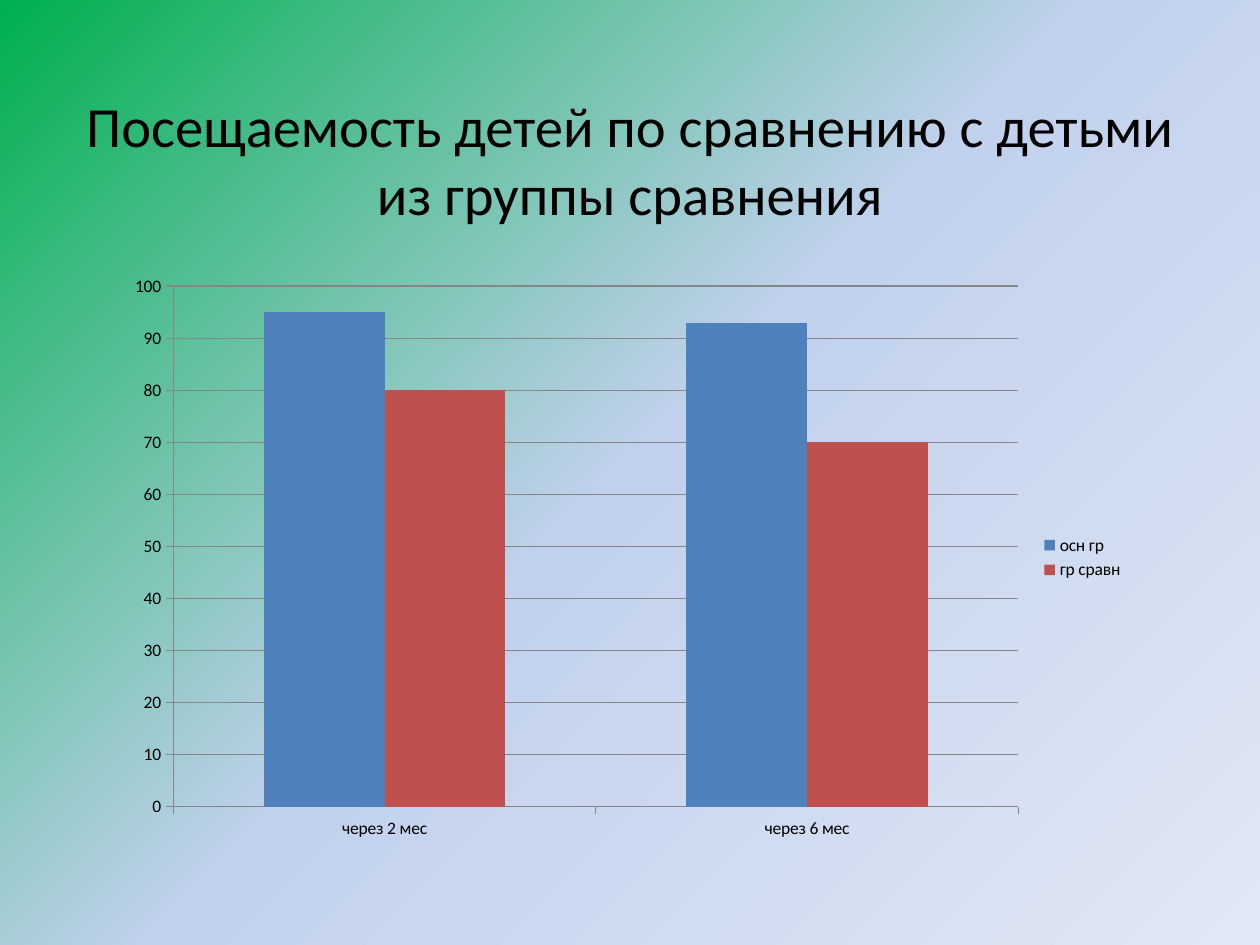
from copy import deepcopy

from pptx import Presentation
from pptx import util as u
from pptx.chart.data import CategoryChartData
from pptx.dml.color import RGBColor
from pptx.enum import chart as charts, text
from pptx.oxml.ns import qn

FONT = "Calibri"
BLACK = "000000"
AXIS_GREY = "868686"
BACKGROUND_STOPS = [(0, "00B050"), (0.5, "C2D1ED"), (1, "E1E8F5")]
PERIODS = ["через 2 мес", "через 6 мес"]
ATTENDANCE = [("осн гр", [95, 93], "4F81BD"), ("гр сравн", [80, 70], "C0504D")]


def color(value):
    """Return the colour for a hex string."""
    return RGBColor.from_string(value)


def set_font(font, size, value=BLACK):
    """Apply the deck's typeface, a size and a colour to a font."""
    font.name = FONT
    font.size = u.Pt(size)
    font.color.rgb = color(value)


def write_text(frame, words, size, align=text.PP_ALIGN.CENTER,
               anchor=text.MSO_ANCHOR.MIDDLE, top_inset=0.05):
    """Write one formatted paragraph into a text frame."""
    frame.word_wrap = True
    frame.auto_size = text.MSO_AUTO_SIZE.NONE
    frame.vertical_anchor = anchor
    frame.margin_top = u.Inches(top_inset)
    para = frame.paragraphs[0]
    para.alignment = align
    span = para.add_run()
    span.text = words
    set_font(span.font, size)


def paint_background(page, stops, angle):
    """Fill the page with a linear gradient at a clockwise angle."""
    fill = page.background.fill
    fill.gradient()
    fill.gradient_angle = 360 - angle
    stop_list = page.element.find(".//" + qn("a:gsLst"))
    for _ in range(len(stops) - len(stop_list)):
        stop_list.append(deepcopy(stop_list[0]))
    for stop, (position, value) in zip(fill.gradient_stops, stops):
        stop.position = position
        stop.color.rgb = color(value)


def place_title(page, left, top, width, height):
    """Place the heading in the lower part of the title box."""
    box = page.shapes.title
    box.left, box.top = u.Inches(left), u.Inches(top)
    box.width, box.height = u.Inches(width), u.Inches(height)
    write_text(box.text_frame,
               "Посещаемость детей по сравнению с детьми из группы сравнения",
               size=32.4, top_inset=0.72)


def style_axis(axis):
    """Give an axis outward ticks and a thin grey line."""
    axis.major_tick_mark = charts.XL_TICK_MARK.OUTSIDE
    axis.minor_tick_mark = charts.XL_TICK_MARK.NONE
    axis.format.line.color.rgb = color(AXIS_GREY)
    axis.format.line.width = u.Pt(0.75)


def place_attendance_chart(page, left, top, width, height):
    """Place the clustered columns that compare the two groups."""
    data = CategoryChartData()
    data.categories = PERIODS
    for name, values, _ in ATTENDANCE:
        data.add_series(name, values)
    chart = page.shapes.add_chart(
        charts.XL_CHART_TYPE.COLUMN_CLUSTERED, u.Inches(left), u.Inches(top),
        u.Inches(width), u.Inches(height), data).chart
    set_font(chart.font, 10)
    chart.has_title = False
    chart.has_legend = True
    chart.legend.position = charts.XL_LEGEND_POSITION.RIGHT
    chart.legend.include_in_layout = False

    style_axis(chart.category_axis)
    values_axis = chart.value_axis
    style_axis(values_axis)
    values_axis.minimum_scale, values_axis.maximum_scale = 0, 100
    values_axis.major_unit = 10
    values_axis.has_major_gridlines = True
    grid = values_axis.major_gridlines.format.line
    grid.color.rgb = color(AXIS_GREY)
    grid.width = u.Pt(0.75)

    plot = chart.plots[0]
    plot.vary_by_categories = False
    plot.gap_width = 150
    for series, (_, _, value) in zip(plot.series, ATTENDANCE):
        series.format.fill.solid()
        series.format.fill.fore_color.rgb = color(value)


def main():
    """Build and save the one-slide deck."""
    deck = Presentation()
    deck.slide_width, deck.slide_height = u.Inches(10), u.Inches(7.5)
    page = deck.slides.add_slide(deck.slide_layouts.get_by_name("Title Only"))
    paint_background(page, BACKGROUND_STOPS, angle=45)
    place_title(page, 0.5, 0.3, 9, 1.25)
    place_attendance_chart(page, 0.91, 2.1, 8.11, 4.65)
    deck.save("out.pptx")


if __name__ == "__main__":
    main()
